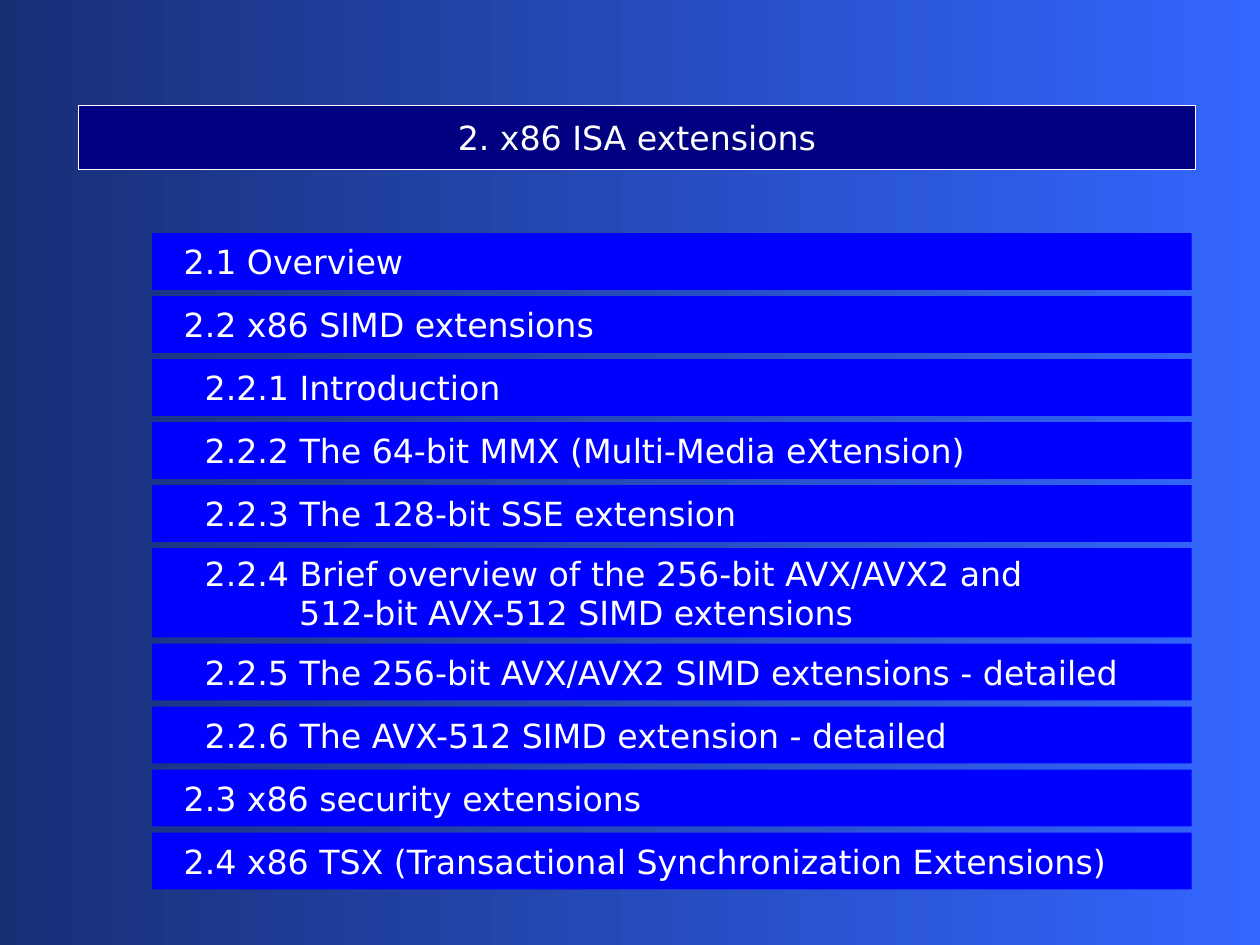
from pptx import Presentation
from pptx.dml.color import RGBColor as RGB
from pptx.enum.shapes import MSO_SHAPE as SHAPE
from pptx.enum.text import MSO_ANCHOR as ANCHOR, PP_ALIGN as ALIGN
from pptx.util import Pt

COLORS = {"dark": "182F76", "light": "3366FF", "navy": "000080",
          "blue": "0000FF", "white": "FFFFFF"}
INDENTS = {"section": 0, "topic": 12, "wrapped": 66}
ROW_H, TALL_H, GAP = 32.4, 51, 3.6

rows = [
    [("section", "2.1 Overview")],
    [("section", "2.2 x86 SIMD extensions")],
    [("topic", "2.2.1 Introduction")],
    [("topic", "2.2.2 The 64-bit MMX (Multi-Media eXtension)")],
    [("topic", "2.2.3 The 128-bit SSE extension")],
    [("topic", "2.2.4 Brief overview of the 256-bit AVX/AVX2 and"),
     ("wrapped", "512-bit AVX-512 SIMD extensions")],
    [("topic", "2.2.5 The 256-bit AVX/AVX2 SIMD extensions - detailed")],
    [("topic", "2.2.6 The AVX-512 SIMD extension - detailed")],
    [("section", "2.3 x86 security extensions")],
    [("section", "2.4 x86 TSX (Transactional Synchronization Extensions)")],
]


def color(name):
    return RGB.from_string(COLORS[name])


def add_bar(left, top, width, height, fill, lines, align):
    """Add a filled bar; lines holds (indent name, text) pairs."""
    bar = slide.shapes.add_shape(SHAPE.ROUNDED_RECTANGLE, Pt(left), Pt(top),
                                 Pt(width), Pt(height))
    bar.adjustments[0] = 0
    bar.shadow.inherit = False
    bar.fill.solid()
    bar.fill.fore_color.rgb = color(fill)
    bar.line.fill.background()
    frame = bar.text_frame
    frame.word_wrap = True
    frame.vertical_anchor = ANCHOR.MIDDLE
    frame.margin_top = frame.margin_bottom = 0
    for i, (indent, text) in enumerate(lines):
        para = frame.add_paragraph() if i else frame.paragraphs[0]
        para.text = text
        para.alignment = align
        para.font.name = "DejaVu Sans"
        para.font.size = Pt(19)
        para.font.color.rgb = color("white")
        para._p.get_or_add_pPr().set("marL", str(Pt(INDENTS[indent])))
    return bar


prs = Presentation()
prs.slide_width, prs.slide_height = Pt(720), Pt(540)
slide = prs.slides.add_slide(prs.slide_layouts[6])

back = slide.background.fill
back.gradient()
back.gradient_angle = 0
for stop, name, place in zip(back.gradient_stops, ("dark", "light"), (0, 1)):
    stop.color.rgb = color(name)
    stop.position = place

title = add_bar(44.8, 60.3, 638.4, 36.6, "navy",
                [("section", "2. x86 ISA extensions")], ALIGN.CENTER)
title.line.color.rgb = color("white")
title.line.width = Pt(0.75)

top = 133.2
for lines in rows:
    height = TALL_H if len(lines) > 1 else ROW_H
    bar = add_bar(87, top, 594, height, "blue", lines, ALIGN.LEFT)
    bar.text_frame.margin_left = Pt(18)
    top += height + GAP

prs.save("out.pptx")
